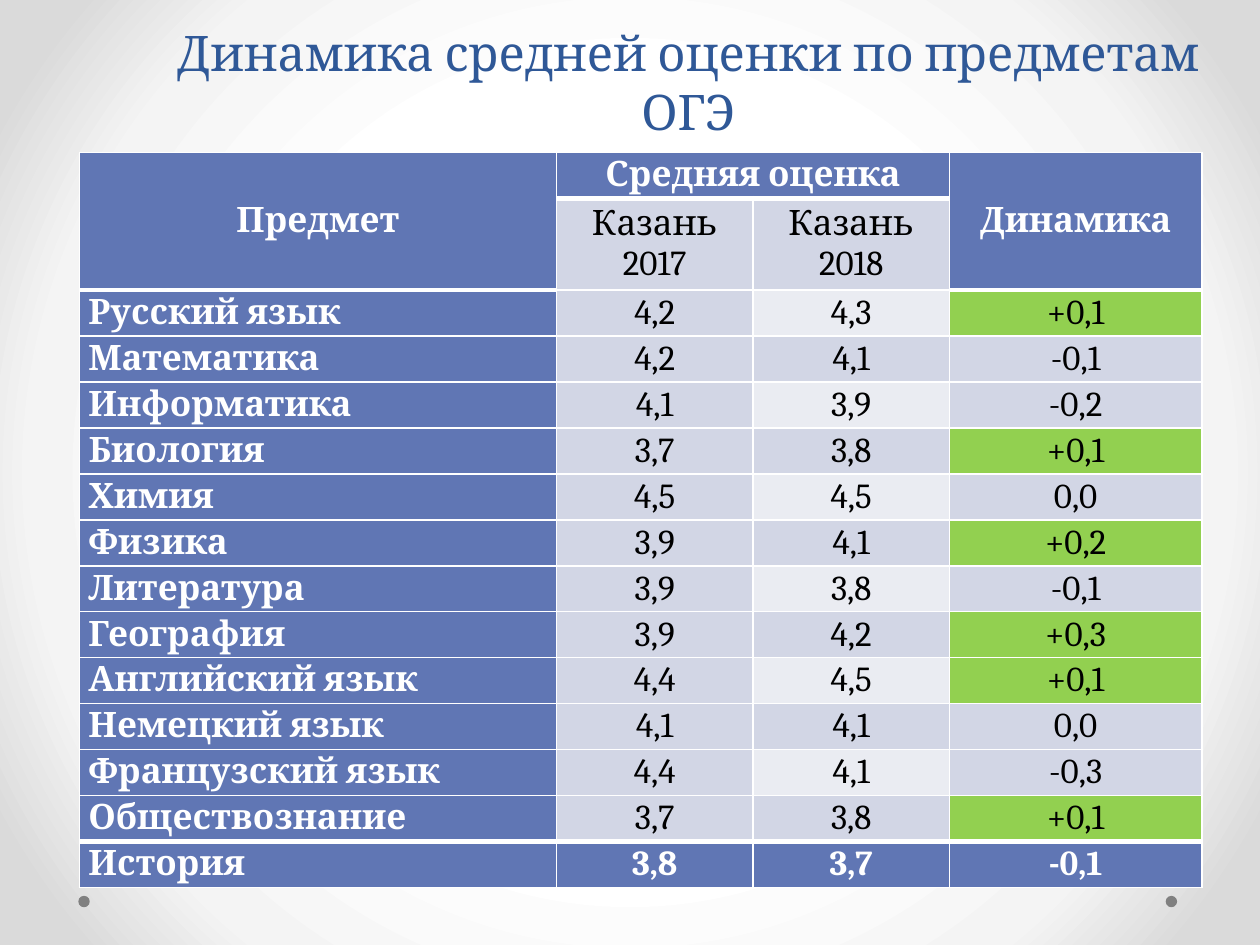
from pptx import Presentation
from pptx.dml.color import RGBColor
from pptx.enum.shapes import MSO_SHAPE
from pptx.enum.text import MSO_ANCHOR, PP_ALIGN
from pptx.oxml import parse_xml
from pptx.oxml.ns import nsdecls
from pptx.util import Cm, Pt

OVAL = MSO_SHAPE.OVAL
TOP, MIDDLE = MSO_ANCHOR.TOP, MSO_ANCHOR.MIDDLE
LEFT, CENTER = PP_ALIGN.LEFT, PP_ALIGN.CENTER

TITLE = "Динамика средней оценки по предметам ОГЭ"
HEADER = [
    ["Предмет", "Средняя оценка", "", "Динамика"],
    ["", "Казань\n2017", "Казань\n2018", ""],
]
SUBJECTS = [
    ["Русский язык", "4,2", "4,3", "+0,1"],
    ["Математика", "4,2", "4,1", "-0,1"],
    ["Информатика", "4,1", "3,9", "-0,2"],
    ["Биология", "3,7", "3,8", "+0,1"],
    ["Химия", "4,5", "4,5", "0,0"],
    ["Физика", "3,9", "4,1", "+0,2"],
    ["Литература", "3,9", "3,8", "-0,1"],
    ["География", "3,9", "4,2", "+0,3"],
    ["Английский язык", "4,4", "4,5", "+0,1"],
    ["Немецкий язык", "4,1", "4,1", "0,0"],
    ["Французский язык", "4,4", "4,1", "-0,3"],
    ["Обществознание", "3,7", "3,8", "+0,1"],
    ["История", "3,8", "3,7", "-0,1"],
]
ROWS = HEADER + SUBJECTS
LAST = len(ROWS) - 1
MERGES = [((0, 0), (1, 0)), ((0, 1), (0, 2)), ((0, 3), (1, 3))]
COLUMNS = [9.62, 3.96, 3.96, 5.09]
TABLE_LEFT, TABLE_TOP, TABLE_HEIGHT = 1.6, 3.07, 14.83

THEME = {
    "font": "Cambria", "title_size": 28, "cell_size": 20,
    "title": "2F5897", "accent": "6076B4", "band": "D2D6E5",
    "light": "EAECF2", "growth": "92D050", "white": "FFFFFF",
    "black": "000000", "dot": "808080", "thin": 1, "thick": 3,
    "background": [(0, "FFFFFF"), (50, "FFFFFF"), (76, "F4F4F4"),
                   (92, "DADADA"), (100, "DADADA")],
}


def color(name):
    return RGBColor.from_string(THEME[name])


def write(tf, text, size, ink, align, bold=False):
    for i, line in enumerate(text.split("\n")):
        p = tf.paragraphs[0] if i == 0 else tf.add_paragraph()
        p.alignment = align
        r = p.add_run()
        r.text = line
        r.font.name = THEME["font"]
        r.font.size = Pt(THEME[size])
        r.font.bold = bold
        r.font.color.rgb = color(ink)


def paint_background(s):
    s.background.fill.solid()
    bg = s.element.xpath(".//p:bgPr")[0]
    stops = "".join(
        f'<a:gs pos="{pos * 1000}"><a:srgbClr val="{rgb}"/></a:gs>'
        for pos, rgb in THEME["background"])
    gradient = parse_xml(
        f'<a:gradFill {nsdecls("a")} rotWithShape="1"><a:gsLst>{stops}</a:gsLst>'
        '<a:path path="circle"><a:fillToRect l="50000" t="50000" r="50000" b="50000"/>'
        '</a:path></a:gradFill>')
    bg.replace(bg[0], gradient)


def thick_below(row, col):
    return row in (0, LAST - 1) or (row == 1 and col in (0, 3))


def set_borders(cell, row, col):
    heavy = {"T": row > 0 and thick_below(row - 1, col), "B": thick_below(row, col)}
    for side in "LRTB":
        width = Pt(THEME["thick" if heavy.get(side) else "thin"])
        cell._tc.get_or_add_tcPr().append(parse_xml(
            f'<a:ln{side} {nsdecls("a")} w="{width}"><a:solidFill>'
            f'<a:srgbClr val="{THEME["white"]}"/></a:solidFill></a:ln{side}>'))


def cell_fill(row, col, text):
    if row in (0, LAST) or col == 0 or (row == 1 and col == 3):
        return "accent"
    if text.startswith("+"):
        return "growth"
    return "light" if col == 2 and row % 2 == 0 else "band"


def add_grades(s):
    frame = s.shapes.add_table(len(ROWS), len(COLUMNS), Cm(TABLE_LEFT), Cm(TABLE_TOP),
                               Cm(sum(COLUMNS)), Cm(TABLE_HEIGHT))
    table = frame.table
    table.first_row = table.horz_banding = False
    for column, width in zip(table.columns, COLUMNS):
        column.width = Cm(width)
    unit = TABLE_HEIGHT / (len(ROWS) + 1)
    for i, row in enumerate(table.rows):
        row.height = Cm(unit * (2 if i == 1 else 1))
    for start, end in MERGES:
        table.cell(*start).merge(table.cell(*end))
    for i, texts in enumerate(ROWS):
        for j, text in enumerate(texts):
            cell = table.cell(i, j)
            fill = cell_fill(i, j, text)
            set_borders(cell, i, j)
            cell.fill.solid()
            cell.fill.fore_color.rgb = color(fill)
            cell.vertical_anchor = MIDDLE
            cell.margin_left = cell.margin_right = Cm(0.18)
            cell.margin_top = cell.margin_bottom = 0
            if text:
                strong = fill == "accent"
                align = LEFT if j == 0 and i >= len(HEADER) else CENTER
                write(cell.text_frame, text, "cell_size",
                      "white" if strong else "black", align, strong)


def main():
    prs = Presentation()
    prs.slide_width, prs.slide_height = Cm(25.4), Cm(19.05)
    s = prs.slides.add_slide(prs.slide_layouts[6])
    paint_background(s)
    for left in (23.5, 1.58):
        sp = s.shapes.add_shape(OVAL, Cm(left), Cm(18.06), Cm(0.23), Cm(0.23))
        sp.shadow.inherit = False
        sp.fill.solid()
        sp.fill.fore_color.rgb = color("dot")
        sp.line.fill.background()
    tf = s.shapes.add_textbox(Cm(2.7), Cm(0.33), Cm(22.35), Cm(2.13)).text_frame
    tf.word_wrap = True
    tf.vertical_anchor = TOP
    write(tf, TITLE, "title_size", "title", CENTER)
    add_grades(s)
    prs.save("out.pptx")


if __name__ == "__main__":
    main()
